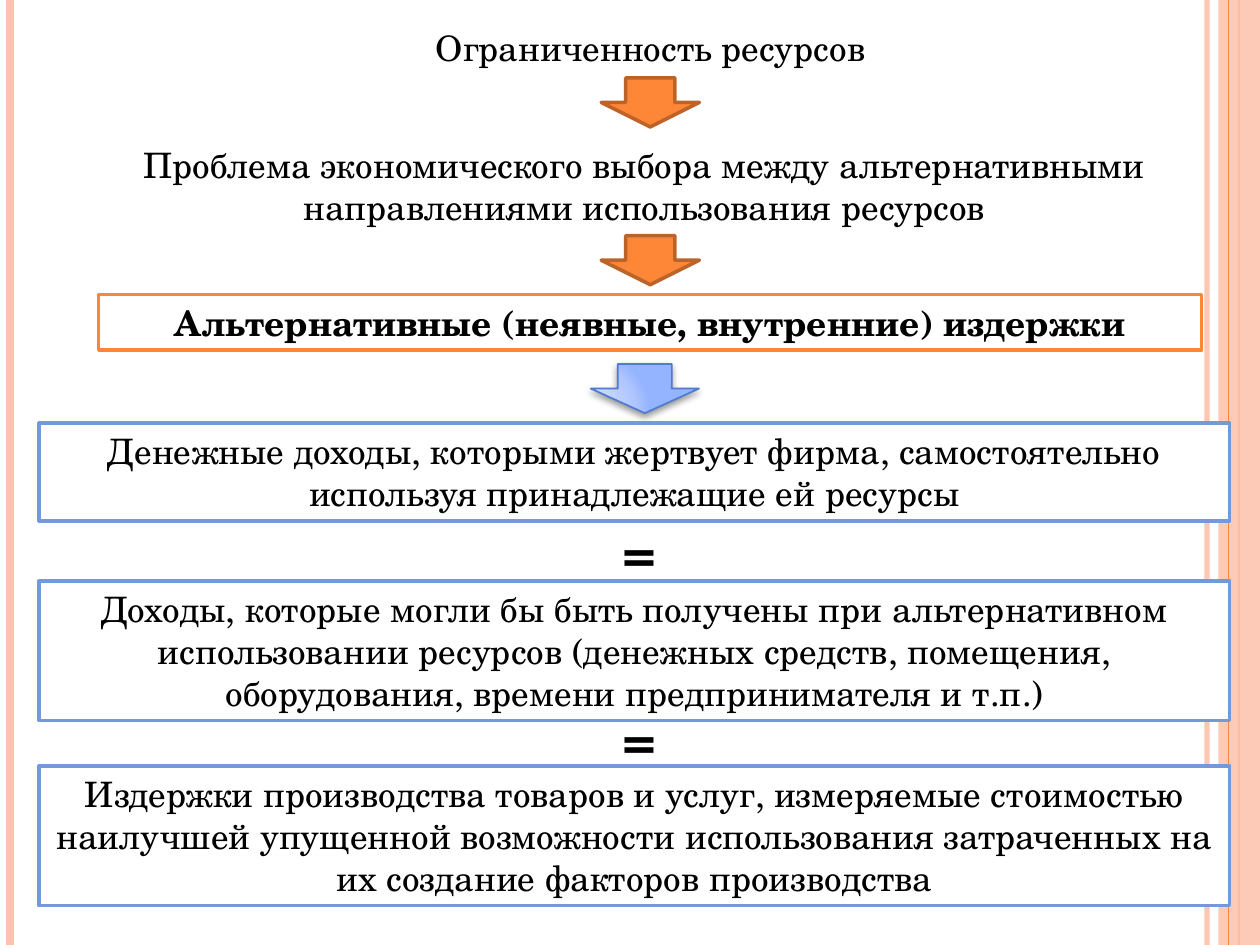
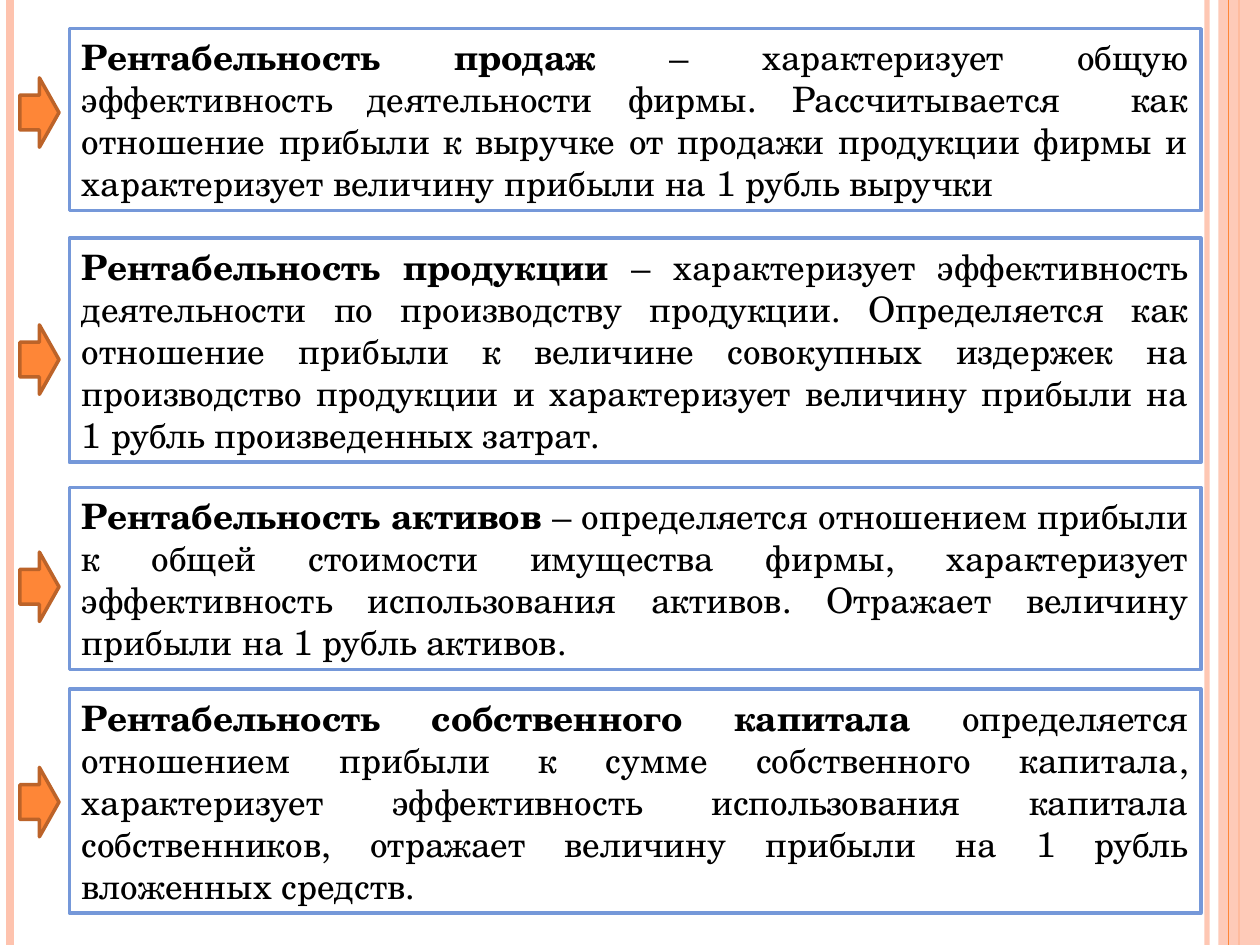
from dataclasses import dataclass

from lxml import etree
from pptx import Presentation
from pptx.dml.color import RGBColor
from pptx.enum import shapes as kinds, text as modes
from pptx.oxml import ns, parse_xml
from pptx.util import Cm, Pt


@dataclass(frozen=True)
class Theme:
    font: str = "TeX Gyre Schola"
    ink: str = "000000"
    paper: str = "FFFFFF"
    orange: str = "FE8637"
    rust: str = "BC6329"
    peach: str = "FEC3AE"
    blue: str = "7598D9"
    navy: str = "4F7CCF"
    glow: tuple = ((0, "CFDCFF"), (30, "CBD9FF"), (75, "AFC6FF"), (100, "95B4FF"))
    body: int = 20
    sign: int = 32
    line: float = 2


T = Theme()
WIDE, HIGH = 25.4, 19.05
KIND = kinds.MSO_SHAPE
ALIGN = modes.PP_ALIGN
A = ns.nsdecls("a")


def rgb(code):
    return RGBColor.from_string(code)


def tall(rows):
    """Height in cm of a box that holds this many rows of body text."""
    return 0.27 + 0.85 * rows


def fade(part, tag, alpha):
    """Set the opacity, in percent, of a solid fill or line."""
    for color in part._element.spPr.findall(tag + "/" + ns.qn("a:srgbClr")):
        etree.SubElement(color, ns.qn("a:alpha"), val=str(alpha * 1000))


def write(shape, parts, size=T.body, align=ALIGN.CENTER, wrap=True):
    """Fill a shape with one paragraph made of (words, bold) parts."""
    frame = shape.text_frame
    frame.word_wrap = wrap
    frame.auto_size = modes.MSO_AUTO_SIZE.SHAPE_TO_FIT_TEXT
    para = frame.paragraphs[0]
    para.alignment = align
    for words, bold in parts:
        run = para.add_run()
        run.text = words
        font = run.font
        font.name, font.size, font.bold = T.font, Pt(size), bold
        font.color.rgb = rgb(T.ink)


def label(slide, box, words, bold=False, **style):
    shape = slide.shapes.add_textbox(*map(Cm, box))
    write(shape, [(words, bold)], **style)


def block(slide, kind, box, fill, edge=None, width=T.line):
    shape = slide.shapes.add_shape(kind, *map(Cm, box))
    shape.shadow.inherit = False
    shape.fill.solid()
    shape.fill.fore_color.rgb = rgb(fill)
    if edge:
        shape.line.color.rgb = rgb(edge)
        shape.line.width = Pt(width)
    else:
        shape.line.fill.background()
    return shape


def card(slide, box, parts, edge=T.blue, **style):
    write(block(slide, KIND.RECTANGLE, box, T.paper, edge), parts, **style)


def arrow(slide, kind, box):
    block(slide, kind, box, T.orange, T.rust)


def gleam(slide, box):
    """Blue down arrow with a round gradient and a soft shadow."""
    shape = block(slide, KIND.DOWN_ARROW, box, T.blue, T.navy, 1)
    props = shape._element.spPr
    stops = "".join(
        f'<a:gs pos="{pos * 1000}"><a:srgbClr val="{code}"/></a:gs>'
        for pos, code in T.glow)
    grad = parse_xml(
        f'<a:gradFill {A}><a:gsLst>{stops}</a:gsLst><a:path path="circle">'
        '<a:fillToRect l="5000" t="100000" r="120000" b="10000"/>'
        '</a:path></a:gradFill>')
    props.replace(props.find(ns.qn("a:solidFill")), grad)
    props.find(ns.qn("a:effectLst")).append(parse_xml(
        f'<a:outerShdw {A} blurRad="{Pt(4)}" dist="{Pt(2)}" dir="5400000" '
        'rotWithShape="0"><a:srgbClr val="000000"><a:alpha val="40000"/>'
        '</a:srgbClr></a:outerShdw>'))


def rule(slide, x, color, width):
    line = slide.shapes.add_connector(
        kinds.MSO_CONNECTOR.STRAIGHT, Cm(x), 0, Cm(x), Cm(HIGH))
    line.line.color.rgb = rgb(color)
    line.line.width = Pt(width)
    etree.SubElement(line._element.spPr, ns.qn("a:effectLst"))
    return line


def frame(deck):
    """Add a slide with the side bands that all slides share."""
    slide = deck.slides.add_slide(deck.slide_layouts[6])
    fade(rule(slide, 24.33, T.peach, 3), "{*}ln/{*}solidFill", 93)
    rule(slide, 0.2, T.peach, 4.5)
    mid = rule(slide, 24.98, T.orange, 1.5)
    band = block(slide, KIND.RECTANGLE, (24.56, 0, WIDE - 24.56, HIGH), T.peach)
    fade(band, "{*}solidFill", 87)
    mid.begin_connect(band, 0)
    mid.end_connect(band, 2)
    rule(slide, 24.77, T.orange, 0.75)
    return slide


def causes(slide, x, y):
    """Upper chain: from scarce resources to alternative costs."""
    label(slide, (x + 7.75, y, 9.25, tall(1)), "Ограниченность ресурсов",
          align=ALIGN.LEFT, wrap=False)
    label(slide, (x + 0.2, y + 2.36, 24, tall(2)),
          "Проблема экономического выбора между альтернативными "
          "направлениями использования ресурсов")
    card(slide, (x + 1.2, y + 5.54, 22.23, tall(1)),
         [("Альтернативные (неявные, внутренние) издержки", True)],
         edge=T.orange)
    for top in (1.17, 4.35):
        arrow(slide, KIND.DOWN_ARROW, (x + 11.33, y + top, 1.98, 0.99))


def equals(slide, x, y):
    """Lower chain: three equal definitions."""
    gleam(slide, (x + 11.12, y - 1.19, 2.18, 0.99))
    rows = (
        (0, 2, "Денежные доходы, которыми жертвует фирма, самостоятельно "
               "используя принадлежащие ей ресурсы"),
        (3.18, 3, "Доходы, которые могли бы быть получены при альтернативном "
                  "использовании ресурсов (денежных средств, помещения, "
                  "оборудования, времени предпринимателя и т.п.)"),
        (6.91, 3, "Издержки производства товаров и услуг, измеряемые "
                  "стоимостью наилучшей упущенной возможности использования "
                  "затраченных на их создание факторов производства"),
    )
    for top, count, words in rows:
        card(slide, (x, y + top, 24, tall(count)), [(words, False)])
    for top in (1.76, 5.52):
        label(slide, (x + 11.5, y + top, 1.19, 1.62), "=", bold=True,
              size=T.sign, align=ALIGN.LEFT, wrap=False)


def ratios(slide, x, y):
    """Return ratios: a card and its arrow in each row."""
    # card top, arrow top, row count, term, meaning
    rows = (
        (0, 0.99, 4, "Рентабельность продаж ",
         "– характеризует общую эффективность деятельности фирмы. "
         "Рассчитывается  как отношение прибыли к выручке от продажи "
         "продукции фирмы и характеризует величину прибыли на 1 рубль "
         "выручки"),
        (4.22, 5.97, 5, "Рентабельность продукции ",
         "– характеризует эффективность деятельности по производству "
         "продукции. Определяется как отношение прибыли к величине "
         "совокупных издержек на производство продукции и характеризует "
         "величину прибыли на 1 рубль произведенных затрат."),
        (9.25, 10.55, 4, "Рентабельность активов ",
         "– определяется отношением прибыли к общей стоимости имущества "
         "фирмы, характеризует эффективность использования активов. "
         "Отражает величину прибыли на 1 рубль активов."),
        (13.31, 14.89, 5, "Рентабельность собственного капитала ",
         "определяется отношением прибыли к сумме собственного капитала, "
         "характеризует эффективность использования капитала собственников, "
         "отражает величину прибыли на 1 рубль вложенных средств."),
    )
    for top, tip, count, term, words in rows:
        card(slide, (x + 1, y + top, 22.81, tall(count)),
             [(term, True), (words, False)], align=ALIGN.JUSTIFY)
        arrow(slide, KIND.RIGHT_ARROW, (x, y + tip, 0.79, 1.4))


def main():
    deck = Presentation()
    deck.slide_width, deck.slide_height = Cm(WIDE), Cm(HIGH)

    # Alternative costs
    slide = frame(deck)
    causes(slide, 0.79, 0.4)
    equals(slide, 0.79, 8.53)

    # Kinds of return
    ratios(frame(deck), 0.4, 0.58)

    deck.save("out.pptx")


if __name__ == "__main__":
    main()
